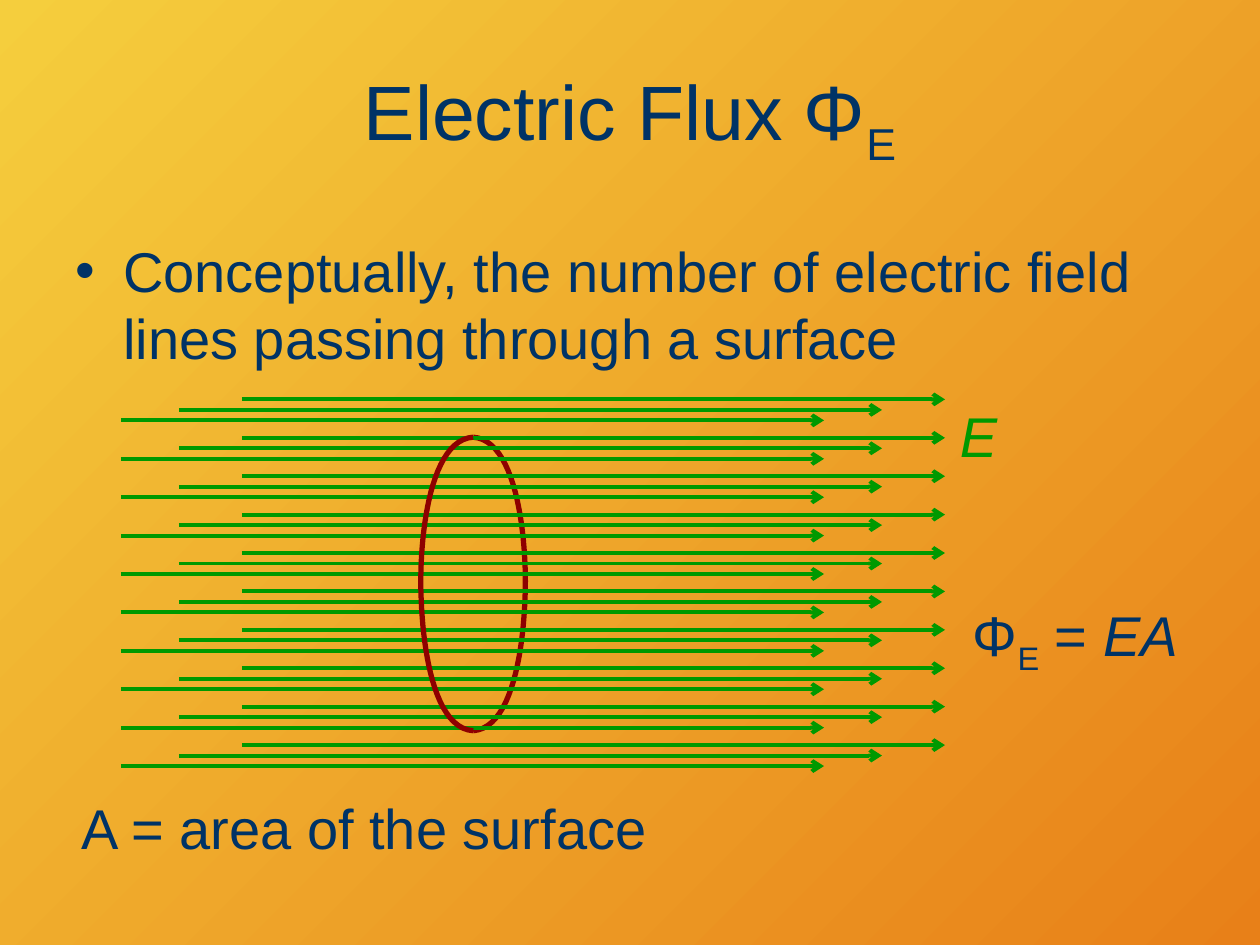
from dataclasses import dataclass

from lxml import etree
from pptx import Presentation
from pptx.dml.color import RGBColor
from pptx.enum.shapes import MSO_CONNECTOR
from pptx.enum.text import MSO_ANCHOR, PP_ALIGN
from pptx.oxml.ns import qn
from pptx.util import Pt

LINE = MSO_CONNECTOR.STRAIGHT
TOP, MIDDLE = MSO_ANCHOR.TOP, MSO_ANCHOR.MIDDLE
LEFT, CENTER = PP_ALIGN.LEFT, PP_ALIGN.CENTER
SCALE = 9144  # EMU in one px, 100 px to the inch


@dataclass(frozen=True)
class Theme:
    font: str = "Arial"
    head: int = 44
    body: int = 32
    ink: str = "003366"
    field: str = "009900"
    ring: str = "8E0000"
    start: str = "F5CE3D"
    end: str = "E88018"
    gap: float = 3.6


THEME = Theme()


def px(num):
    return round(num * SCALE)


def paint(color, value):
    color.rgb = RGBColor.from_string(value)


def add_text(shapes, box, runs, size=THEME.body, color=THEME.ink,
             align=LEFT, anchor=TOP, gap=THEME.gap):
    """Runs are (text, style) pairs; style is "", "sub" or "italic"."""
    frame = shapes.add_textbox(*map(px, box)).text_frame
    frame.word_wrap = True
    frame.vertical_anchor = anchor
    para = frame.paragraphs[0]
    para.alignment = align
    para.space_before = Pt(gap)
    for text, style in runs:
        run = para.add_run()
        run.text = text
        run.font.name = THEME.font
        run.font.size = Pt(size)
        paint(run.font.color, color)
        if style == "italic":
            run.font.italic = True
        elif style == "sub":
            run._r.get_or_add_rPr().set("baseline", "-25000")
    return para


def add_bullet(para, indent):
    props = para._p.get_or_add_pPr()
    props.set("marL", str(px(indent)))
    props.set("indent", str(-px(indent)))
    font = etree.SubElement(props, qn("a:buFont"))
    font.set("typeface", THEME.font)
    etree.SubElement(props, qn("a:buChar")).set("char", "•")


def add_arrow(shapes, left, top, width):
    arrow = shapes.add_connector(LINE, px(left), px(top), px(left + width), px(top))
    paint(arrow.line.color, THEME.field)
    arrow.line.width = Pt(2.25)
    etree.SubElement(arrow.line._get_or_add_ln(), qn("a:tailEnd")).set("type", "arrow")
    etree.SubElement(arrow._element.spPr, qn("a:effectLst"))


def curve(points, steps=24):
    """Points along a cubic curve, without its first one."""
    for step in range(1, steps + 1):
        t = step / steps
        parts = ((1 - t) ** 3, 3 * t * (1 - t) ** 2, 3 * t * t * (1 - t), t ** 3)
        yield tuple(sum(part * point[axis] for part, point in zip(parts, points))
                    for axis in (0, 1))


def add_half(shapes, box, side):
    """Half of the surface's rim; side is 1 for the right, -1 for the left."""
    left, top, width, height = box
    mid, reach = left + width / 2, side * width / 2

    def place(point):
        return px(mid + point[0] * reach), px(top + point[1] * height)

    upper = ((0, 0), (0.81, 0.01), (1, 0.32), (1, 0.49))
    lower = ((1, 0.49), (1, 0.66), (0.83, 0.99), (0, 1))
    path = shapes.build_freeform(*place(upper[0]), scale=1.0)
    path.add_line_segments([place(point) for part in (upper, lower)
                            for point in curve(part)], close=False)
    rim = path.convert_to_shape()
    rim.shadow.inherit = False
    rim.fill.background()
    paint(rim.line.color, THEME.ring)
    rim.line.width = Pt(3)


def add_field(shapes, box):
    """Three staggered layers of parallel field lines, with their label."""
    left, top, width, height = box
    group = shapes.add_group_shape().shapes
    rows, drop = 10, 8.33
    length = width - 96
    pitch = (height - 2 * drop) / (rows - 1)
    for layer, shift in enumerate((0, 46, 96)):
        first = top + (2 - layer) * drop
        for row in range(rows):
            add_arrow(group, left + shift, first + row * pitch, length)
    add_text(group, (left + width + 2, top - 3, 57, 67), [("E", "italic")],
             color=THEME.field)


def add_flux(shapes, box):
    """Field lines passing through the ring-shaped surface."""
    left, top, width, height = box
    ring = (left + 238, top + 30, 83, 233)
    add_half(shapes, ring, 1)
    add_field(shapes, box)
    add_half(shapes, ring, -1)


def add_back(slide):
    fill = slide.background.fill
    fill.gradient()
    fill.gradient_angle = 315
    for stop, place, value in zip(fill.gradient_stops, (0, 1), (THEME.start, THEME.end)):
        stop.position = place
        paint(stop.color, value)


def main():
    deck = Presentation()
    deck.slide_width, deck.slide_height = px(1000), px(750)
    slide = deck.slides.add_slide(deck.slide_layouts[6])
    shapes = slide.shapes
    add_back(slide)

    # Title and definition
    add_text(shapes, (50, 30, 900, 125), [("Electric Flux Φ", ""), ("E", "sub")],
             THEME.head, align=CENTER, anchor=MIDDLE, gap=0)
    idea = add_text(shapes, (50, 183, 900, 133), [
        ("Conceptually, the number of electric field lines passing through a surface", "")])
    add_bullet(idea, 38)

    # Diagram
    add_flux(shapes, (96, 317, 654, 291))

    # Formula and its legend
    add_text(shapes, (750, 472, 208, 80),
             [(" Φ", ""), ("E", "sub"), (" = ", ""), ("EA", "italic")])
    add_text(shapes, (55, 625, 511, 67), [("A = area of the surface", "")])

    deck.save("out.pptx")


if __name__ == "__main__":
    main()
